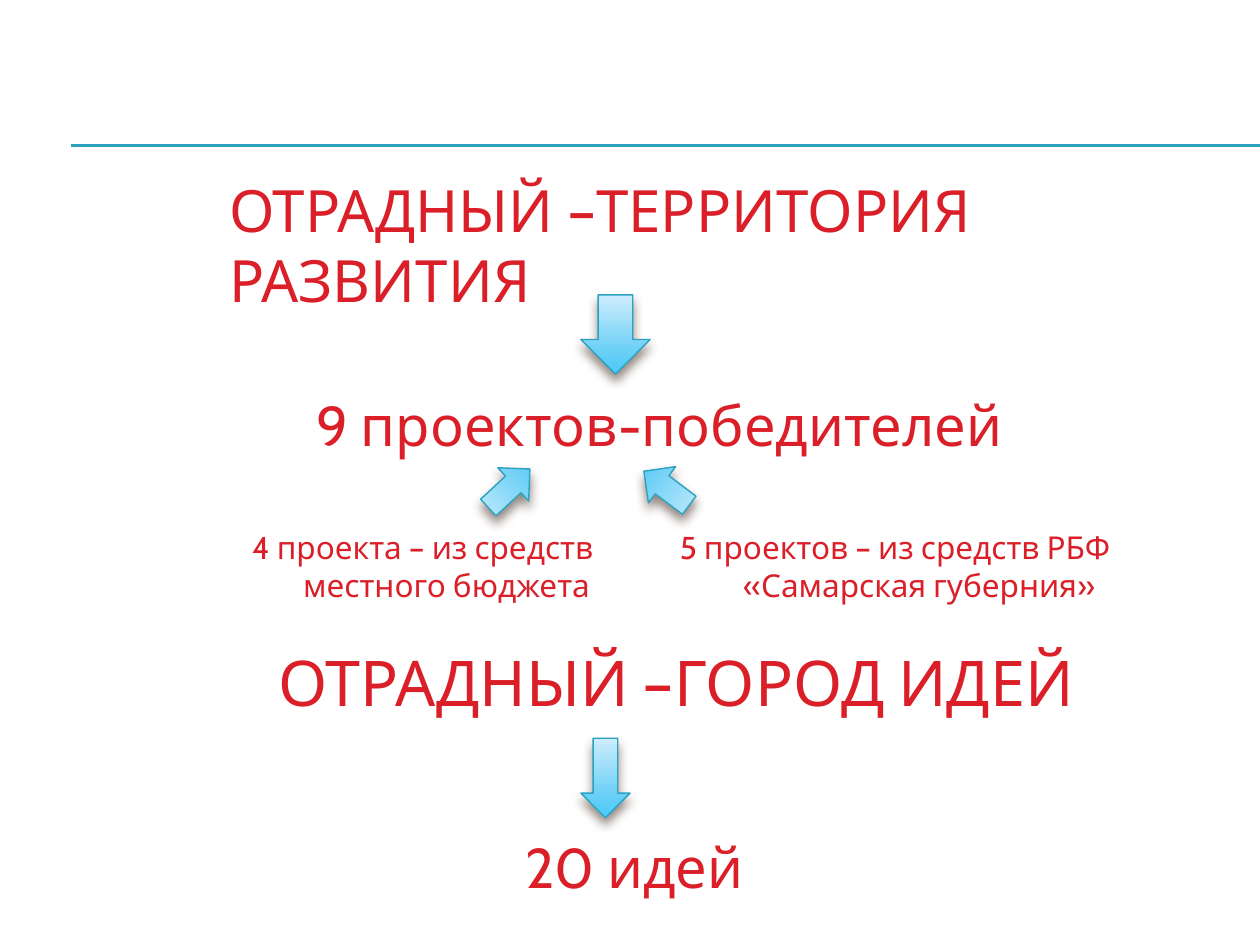
from copy import deepcopy
from dataclasses import dataclass

from lxml.etree import SubElement
from pptx import Presentation
from pptx.dml.color import RGBColor
from pptx.enum.shapes import MSO_CONNECTOR, MSO_SHAPE
from pptx.enum.text import MSO_ANCHOR, MSO_AUTO_SIZE, PP_ALIGN
from pptx.oxml import parse_xml
from pptx.oxml.ns import nsdecls, qn
from pptx.slide import Slide
from pptx.text.text import TextFrame
from pptx.util import Inches, Pt

RED = RGBColor(0xDA, 0x1F, 0x28)
TEAL = RGBColor(0x2D, 0xA2, 0xBF)
GRADIENT = (
    (0, RGBColor(0xCD, 0xED, 0xFC)),
    (0.72, RGBColor(0x6A, 0xCF, 0xF6)),
    (1, RGBColor(0x46, 0xCB, 0xF9)),
)
FONT = "Cabin"
SHADOW = (
    f'<a:effectLst {nsdecls("a")}>'
    f'<a:outerShdw blurRad="{Pt(6)}" dist="{Pt(4)}" dir="5400000" rotWithShape="0">'
    '<a:srgbClr val="4E3B30"><a:alpha val="60000"/></a:srgbClr>'
    "</a:outerShdw></a:effectLst>"
)


@dataclass
class Label:
    text: str
    left: float
    top: float
    width: float
    height: float
    size: float
    heading: bool = False


@dataclass
class Arrow:
    left: float
    top: float
    width: float
    height: float
    rotation: float = 0


HEADING = Label("ОТРАДНЫЙ –ГОРОД ИДЕЙ", 2.11, 5.03, 6.79, 0.75, 36, True)
LABELS = (
    Label("ОТРАДНЫЙ –ТЕРРИТОРИЯ РАЗВИТИЯ", 1.72, 1.56, 7.96, 0.75, 33.3, True),
    Label("9 проектов-победителей", 2.19, 3.05, 6.09, 0.7, 32),
    Label("4 проекта – из средств местного бюджета", 1.48, 4.14, 3.75, 0.63, 18),
    Label("5 проектов – из средств РБФ «Самарская губерния»", 5.23, 4.14, 3.75, 0.63, 18),
    Label("20 идей", 2.73, 6.56, 4.61, 0.7, 32),
)
ARROWS = (
    Arrow(4.61, 2.34, 0.55, 0.63),
    Arrow(4.61, 5.86, 0.39, 0.63),
    Arrow(5.11, 3.65, 0.36, 0.45, 126.9),
    Arrow(3.86, 3.65, 0.36, 0.45, 227.2),
)


def write_label(frame: TextFrame, label: Label) -> None:
    frame.word_wrap = True
    frame.auto_size = MSO_AUTO_SIZE.NONE
    frame.vertical_anchor = MSO_ANCHOR.MIDDLE if label.heading else MSO_ANCHOR.TOP
    para = frame.paragraphs[0]
    para.text = label.text
    para.alignment = PP_ALIGN.LEFT if label.heading else PP_ALIGN.CENTER
    if not label.heading:
        # Hanging indent
        properties = para._p.get_or_add_pPr()
        properties.set("marL", str(Inches(0.38)))
        properties.set("indent", str(Inches(-0.38)))
    para.font.name = FONT
    para.font.size = Pt(label.size)
    para.font.color.rgb = RED


def add_label(page: Slide, label: Label) -> None:
    box = page.shapes.add_textbox(
        Inches(label.left), Inches(label.top), Inches(label.width), Inches(label.height)
    )
    write_label(box.text_frame, label)


def add_arrow(page: Slide, arrow: Arrow) -> None:
    shape = page.shapes.add_shape(
        MSO_SHAPE.DOWN_ARROW,
        Inches(arrow.left), Inches(arrow.top), Inches(arrow.width), Inches(arrow.height),
    )
    shape.rotation = arrow.rotation
    shape.line.color.rgb = TEAL
    shape.line.width = Pt(0.79)
    # Three-stop gradient running from top to bottom
    shape.fill.gradient()
    shape.fill.gradient_angle = 270
    stop_list = shape._element.spPr.find(f".//{qn('a:gsLst')}")
    stop_list.append(deepcopy(stop_list[-1]))
    for stop, (position, color) in zip(shape.fill.gradient_stops, GRADIENT):
        stop.position = position
        stop.color.rgb = color
    shape._element.spPr.append(parse_xml(SHADOW))


def add_rule(page: Slide, y: float) -> None:
    rule = page.shapes.add_connector(
        MSO_CONNECTOR.STRAIGHT, Inches(0.56), Inches(y), Inches(10), Inches(y)
    )
    rule.line.color.rgb = TEAL
    rule.line.width = Pt(0.75)
    SubElement(rule._element.spPr, qn("a:effectLst"))


def main() -> None:
    deck = Presentation()
    deck.slide_width, deck.slide_height = Inches(10), Inches(7.5)
    page = deck.slides.add_slide(deck.slide_layouts[5])

    # Double rule at the top
    for y in (1.15, 1.16):
        add_rule(page, y)

    # Title placeholder
    title = page.shapes.title
    title.left, title.top = Inches(HEADING.left), Inches(HEADING.top)
    title.width, title.height = Inches(HEADING.width), Inches(HEADING.height)
    write_label(title.text_frame, HEADING)

    # Labels and the arrows between them
    for label in LABELS:
        add_label(page, label)
    for arrow in ARROWS:
        add_arrow(page, arrow)

    deck.save("out.pptx")


if __name__ == "__main__":
    main()
